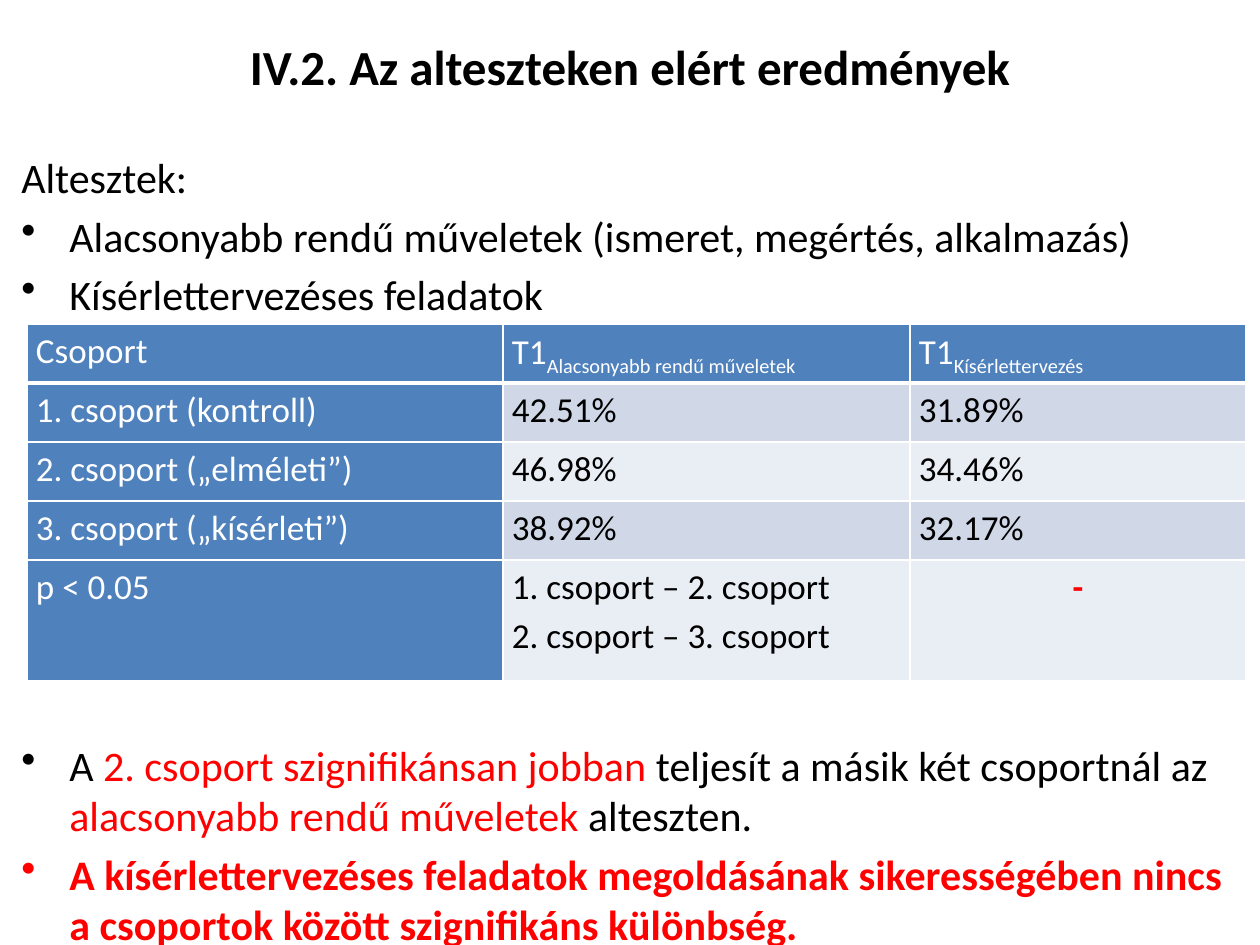
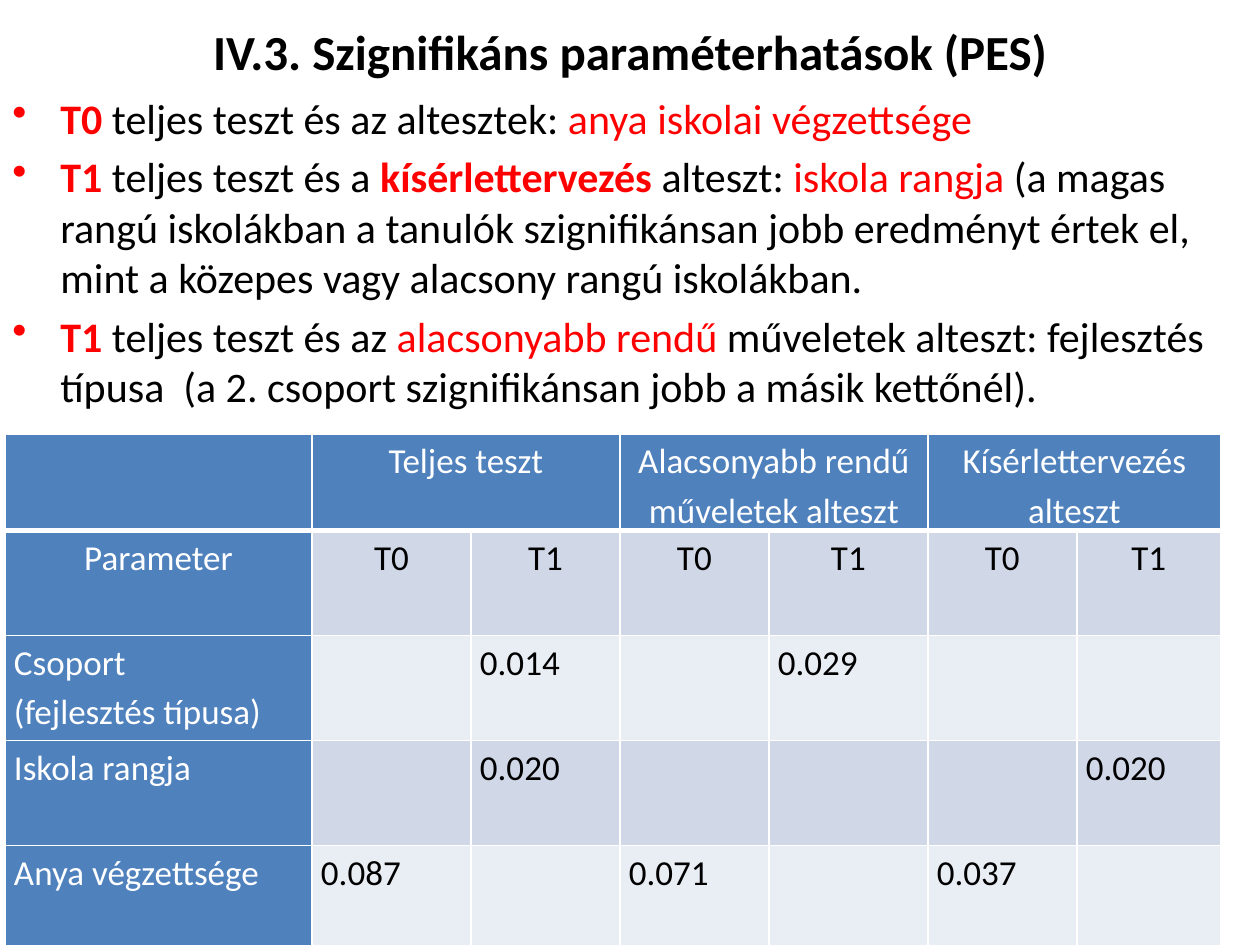
import pptx
import pptx.util
import pptx.dml.color
import pptx.enum.text
import pptx.oxml
import pptx.oxml.ns

SCALE = 914400 / 126
COLORS = {
    "black": "000000", "white": "FFFFFF", "red": "FF0000",
    "head": "4F81BD", "odd": "D0D8E8", "even": "E9EDF4",
}
FONT = {"name": "Calibri", "bold": False}
STYLES = {
    "plain": {},
    "red": {"color": "red"},
    "strong": {"color": "red", "bold": True},
    "title": {"bold": True},
    "sub": {"baseline": "-25000"},
}
LEFT = pptx.enum.text.PP_ALIGN.LEFT
CENTER = pptx.enum.text.PP_ALIGN.CENTER


def px(n):
    return pptx.util.Emu(round(n * SCALE))


def rgb(name):
    return pptx.dml.color.RGBColor.from_string(COLORS[name])


def set_attrs(target, values):
    for name, value in values.items():
        setattr(target, name, value)


def add_runs(p, runs, size, color="black"):
    if isinstance(runs, str):
        runs = [(runs, "plain")]
    for text, style in runs:
        fmt = {**FONT, "size": pptx.util.Pt(size), "color": color, **STYLES[style]}
        r = p.add_run()
        r.text = text
        r.font.color.rgb = rgb(fmt.pop("color"))
        baseline = fmt.pop("baseline", None)
        set_attrs(r.font, fmt)
        if baseline:
            r._r.get_or_add_rPr().set("baseline", baseline)


def add_paragraphs(tf, paragraphs, size, color="black", **fmt):
    for i, runs in enumerate(paragraphs):
        p = tf.paragraphs[0] if i == 0 else tf.add_paragraph()
        set_attrs(p, fmt)
        add_runs(p, runs, size, color)


def add_box(s, box):
    tf = s.shapes.add_textbox(*map(px, box)).text_frame
    tf.word_wrap = True
    return tf


def add_title(s, box, text):
    tf = add_box(s, box)
    tf.vertical_anchor = pptx.enum.text.MSO_ANCHOR.MIDDLE
    add_paragraphs(tf, [[(text, "title")]], 28, alignment=CENTER)


def add_body(s, box, paragraphs, unbulleted=0):
    tf = add_box(s, box)
    add_paragraphs(tf, paragraphs, 24, space_before=pptx.util.Pt(4.8))
    for p in tf.paragraphs[unbulleted:]:
        pPr = p._p.get_or_add_pPr()
        pPr.set("marL", str(px(48)))
        pPr.set("indent", str(-px(48)))
        bullet = pptx.oxml.parse_xml(
            f'<a:buChar {pptx.oxml.ns.nsdecls("a")} char="•"/>')
        pPr.append(bullet)


def add_borders(cell, bottom):
    tcPr = cell._tc.get_or_add_tcPr()
    widths = {"lnL": 1, "lnR": 1, "lnT": 1, "lnB": bottom}
    for i, (tag, width) in enumerate(widths.items()):
        tcPr.insert(i, pptx.oxml.parse_xml(
            f'<a:{tag} {pptx.oxml.ns.nsdecls("a")} w="{pptx.util.Pt(width)}">'
            f'<a:solidFill><a:srgbClr val="{COLORS["white"]}"/></a:solidFill></a:{tag}>'))


def add_table(s, left, top, widths, heights, rows, centered, merges=()):
    box = (left, top, sum(widths), sum(heights))
    table = s.shapes.add_table(len(rows), len(widths), *map(px, box)).table
    set_attrs(table, {"first_row": False, "horz_banding": False})
    for column, width in zip(table.columns, widths):
        column.width = px(width)
    for row, height in zip(table.rows, heights):
        row.height = px(height)
    margins = {"margin_left": px(9), "margin_right": px(9),
               "margin_top": 0, "margin_bottom": 0}
    for i, row in enumerate(rows):
        for j, paragraphs in enumerate(row):
            cell = table.cell(i, j)
            heading = i == 0 or j == 0
            set_attrs(cell, margins)
            cell.fill.solid()
            cell.fill.fore_color.rgb = rgb("head" if heading else ("even", "odd")[i % 2])
            add_borders(cell, 1 if i else 3)
            if isinstance(paragraphs, str):
                paragraphs = paragraphs.split("\n")
            add_paragraphs(cell.text_frame, paragraphs if paragraphs != [""] else [],
                           20, "white" if heading else "black", line_spacing=1.15,
                           alignment=CENTER if centered(i, j) else LEFT)
    for first, last in merges:
        table.cell(0, first).merge(table.cell(0, last))


def subtest_slide(s):
    add_title(s, (63, 5, 1134, 121), "IV.2. Az alteszteken elért eredmények")
    add_body(s, (9, 145, 1246, 180), [
        "Altesztek:",
        "Alacsonyabb rendű műveletek (ismeret, megértés, alkalmazás)",
        "Kísérlettervezéses feladatok",
    ], unbulleted=1)
    add_body(s, (9, 733, 1246, 207), [
        [("A ", "plain"), ("2. csoport szignifikánsan jobban ", "red"),
         ("teljesít a másik két csoportnál az ", "plain"),
         ("alacsonyabb rendű műveletek ", "red"), ("alteszten.", "plain")],
        [("A kísérlettervezéses feladatok megoldásának sikerességében nincs "
          "a csoportok között szignifikáns különbség.", "strong")],
    ])
    rows = [
        ["Csoport",
         [[("T1", "plain"), ("Alacsonyabb rendű műveletek", "sub")]],
         [[("T1", "plain"), ("Kísérlettervezés", "sub")]]],
        ["1. csoport (kontroll)", "42.51%", "31.89%"],
        ["2. csoport („elméleti”)", "46.98%", "34.46%"],
        ["3. csoport („kísérleti”)", "38.92%", "32.17%"],
        ["p < 0.05", "1. csoport – 2. csoport\n2. csoport – 3. csoport",
         [[("-", "strong")]]],
    ]
    add_table(s, 27, 324, [476, 407, 336], [59] * 4 + [121], rows,
              lambda i, j: (i, j) == (4, 2))


def parameter_slide(s):
    add_title(s, (63, 0, 1134, 101), "IV.3. Szignifikáns paraméterhatások (PES)")
    add_body(s, (0, 86, 1260, 743), [
        [("T0", "strong"), (" teljes teszt és az altesztek: ", "plain"),
         ("anya iskolai végzettsége", "red")],
        [("T1", "strong"), (" teljes teszt és a ", "plain"),
         ("kísérlettervezés ", "strong"), ("alteszt: ", "plain"),
         ("iskola rangja ", "red"),
         ("(a magas rangú iskolákban a tanulók szignifikánsan jobb eredményt "
          "értek el, mint a közepes vagy alacsony rangú iskolákban.", "plain")],
        [("T1", "strong"), (" teljes teszt és az ", "plain"),
         ("alacsonyabb rendű ", "red"),
         ("műveletek alteszt: fejlesztés típusa  (a 2. csoport "
          "szignifikánsan jobb a másik kettőnél).", "plain")],
    ])
    rows = [
        ["", "Teljes teszt", "", "Alacsonyabb rendű műveletek alteszt", "",
         "Kísérlettervezés alteszt", ""],
        ["Parameter"] + ["T0", "T1"] * 3,
        ["Csoport\n(fejlesztés típusa)", "", "0.014", "", "0.029", "", ""],
        ["Iskola rangja", "", "0.020", "", "", "", "0.020"],
        ["Anya végzettsége", "0.087", "", "0.071", "", "0.037", ""],
    ]
    add_table(s, 5, 434, [307, 159, 149, 149, 159, 149, 144], [91] + [105] * 4,
              rows, lambda i, j: i < 2, [(1, 2), (3, 4), (5, 6)])


def main():
    prs = pptx.Presentation()
    set_attrs(prs, {"slide_width": px(1260), "slide_height": px(945)})
    for build in (subtest_slide, parameter_slide):
        build(prs.slides.add_slide(prs.slide_layouts[6]))
    prs.save("out.pptx")


if __name__ == "__main__":
    main()
